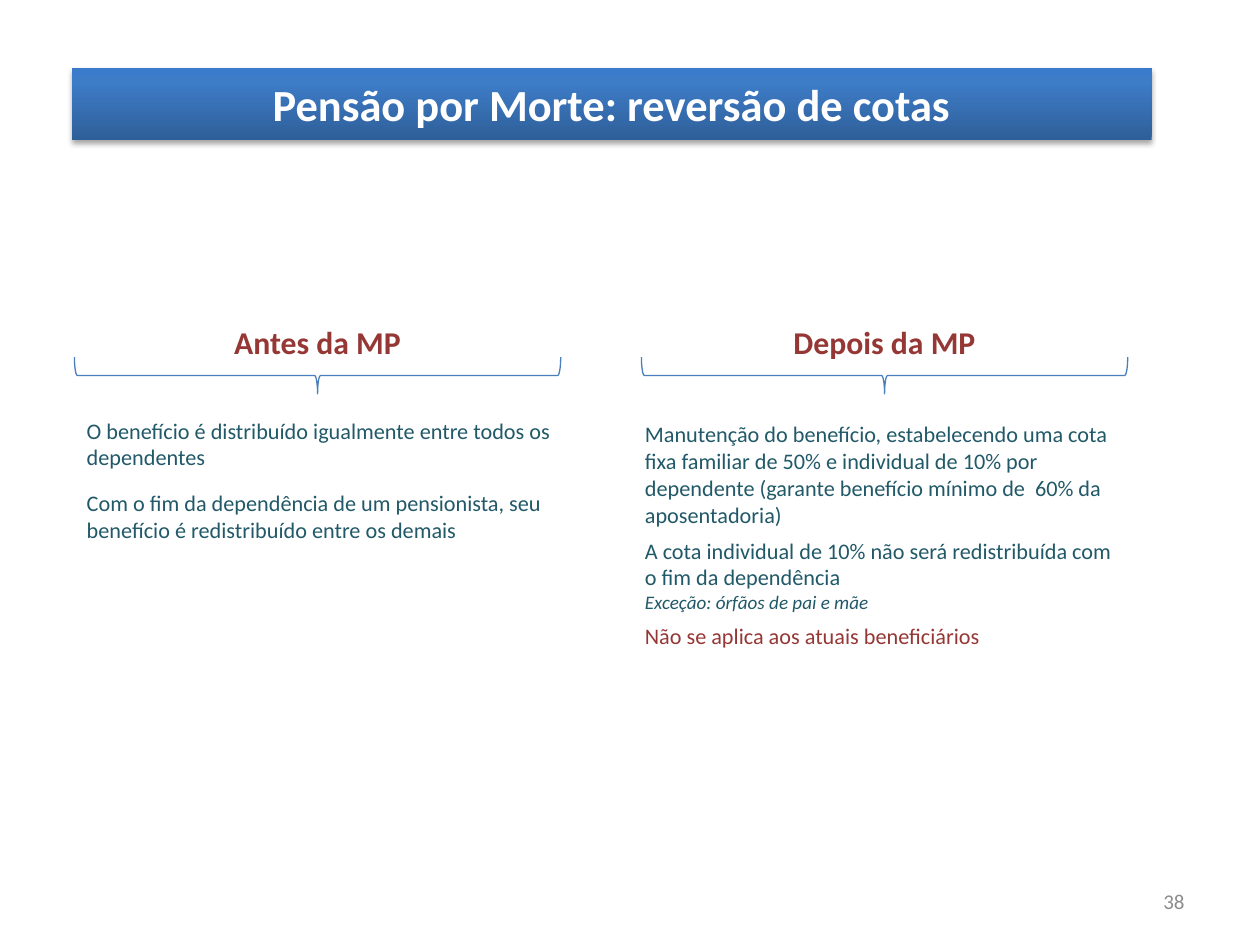
from lxml.etree import SubElement
from pptx import Presentation
from pptx.dml.color import RGBColor
from pptx.enum.shapes import MSO_SHAPE
from pptx.enum.text import MSO_ANCHOR, PP_ALIGN
from pptx.oxml.ns import qn
from pptx.util import Inches, Pt

COLORS = {
    "white": "FFFFFF",
    "teal": "215968",
    "red": "953735",
    "grey": "8C8C8C",
    "brace": "4B7EBC",
    "shadow": "000000",
}
BANNER_STOPS = [(0, "2F5F99"), (80, "3D7CC7"), (100, "3A7CCB")]


def add_xml(parent, tag, **attributes):
    """Append a DrawingML child element with the given attributes."""
    values = {name: str(value) for name, value in attributes.items()}
    return SubElement(parent, qn("a:" + tag), values)


class SlideBuilder:
    font = "Calibri"

    def __init__(self, page):
        self.page = page

    def fill_frame(self, frame, paragraphs, align=PP_ALIGN.LEFT, space_before=0):
        """Fill a frame; a paragraph is a list of lines (text, size, color, style)."""
        for index, lines in enumerate(paragraphs):
            para = frame.add_paragraph() if index else frame.paragraphs[0]
            para.alignment = align
            para.space_before = Pt(space_before)
            for number, (text, size, color, style) in enumerate(lines):
                if number:
                    para.add_line_break()
                span = para.add_run()
                span.text = text
                span.font.name = self.font
                span.font.size = Pt(size)
                span.font.bold = style == "bold"
                span.font.italic = style == "italic"
                span.font.color.rgb = RGBColor.from_string(COLORS[color])

    def text(self, left, top, width, height, paragraphs,
             anchor=MSO_ANCHOR.TOP, **layout):
        box = self.page.shapes.add_textbox(
            Inches(left), Inches(top), Inches(width), Inches(height))
        box.text_frame.word_wrap = True
        box.text_frame.vertical_anchor = anchor
        self.fill_frame(box.text_frame, paragraphs, **layout)

    def banner(self, left, top, width, height, title):
        bar = self.page.shapes.add_shape(
            MSO_SHAPE.RECTANGLE,
            Inches(left), Inches(top), Inches(width), Inches(height))
        bar.line.fill.background()
        self.shade(bar)
        self.drop_shadow(bar)
        frame = bar.text_frame
        frame.margin_left = frame.margin_right = 0
        frame.margin_top = frame.margin_bottom = 0
        frame.word_wrap = False
        frame.vertical_anchor = MSO_ANCHOR.MIDDLE
        self.fill_frame(frame, [[(title, 25.4, "white", "bold")]], PP_ALIGN.CENTER)

    def shade(self, shape):
        """Give the shape the three-stop gradient, running from bottom to top."""
        shape.fill.gradient()
        shape.fill.gradient_angle = 90
        stops = shape._element.spPr.find(qn("a:gradFill")).find(qn("a:gsLst"))
        for stop in list(stops):
            stops.remove(stop)
        for percent, color in BANNER_STOPS:
            stop = add_xml(stops, "gs", pos=percent * 1000)
            add_xml(stop, "srgbClr", val=color)

    def drop_shadow(self, shape):
        shape.shadow.inherit = False
        effects = shape._element.spPr.find(qn("a:effectLst"))
        shadow = add_xml(effects, "outerShdw", blurRad=Pt(3.1), dist=Pt(1.8),
                         dir=90 * 60000, rotWithShape=0)
        color = add_xml(shadow, "srgbClr", val=COLORS["shadow"])
        add_xml(color, "alpha", val=35000)

    def brace(self, center, middle, span, depth):
        """Draw a brace that opens upward, centred on the given point."""
        shape = self.page.shapes.add_shape(
            MSO_SHAPE.RIGHT_BRACE,
            Inches(center - depth / 2), Inches(middle - span / 2),
            Inches(depth), Inches(span))
        shape.rotation = 90
        shape.shadow.inherit = False
        shape.fill.background()
        shape.line.color.rgb = RGBColor.from_string(COLORS["brace"])
        shape.line.width = Pt(0.75)

    def heading(self, center, title):
        width = 3.86
        self.text(center - width / 2, 2.51, width, 0.41,
                  [[(title, 18.1, "red", "bold")]], align=PP_ALIGN.CENTER)
        self.brace(center, 2.98, width, 0.29)


def body(text, color="teal"):
    return (text, 12.7, color, "regular")


def main():
    deck = Presentation()
    deck.slide_width, deck.slide_height = Inches(10), Inches(7.5)
    builder = SlideBuilder(deck.slides.add_slide(deck.slide_layouts[6]))

    builder.banner(0.57, 0.54, 8.57, 0.57, "Pensão por Morte: reversão de cotas")

    builder.heading(2.52, "Antes da MP")
    builder.text(0.59, 3.26, 3.93, 1.39, [
        [body("O benefício é distribuído igualmente entre todos os dependentes")],
        [body("Com o fim da dependência de um pensionista, seu benefício é "
              "redistribuído entre os demais")],
    ], space_before=10.9)

    builder.heading(7.02, "Depois da MP")
    builder.text(5.02, 3.29, 4, 1.92, [
        [body("Manutenção do benefício, estabelecendo uma cota fixa familiar de 50% "
              "e individual de 10% por dependente (garante benefício mínimo de  60% "
              "da aposentadoria)")],
        [body("A cota individual de 10% não será redistribuída com o fim da "
              "dependência"),
         ("Exceção: órfãos de pai e mãe", 10.9, "teal", "italic")],
        [body("Não se aplica aos atuais beneficiários", "red")],
    ], space_before=5.4)

    builder.text(7.17, 6.95, 2.33, 0.4, [[("38", 12, "grey", "regular")]],
                 anchor=MSO_ANCHOR.MIDDLE, align=PP_ALIGN.RIGHT)

    deck.save("out.pptx")


if __name__ == "__main__":
    main()
